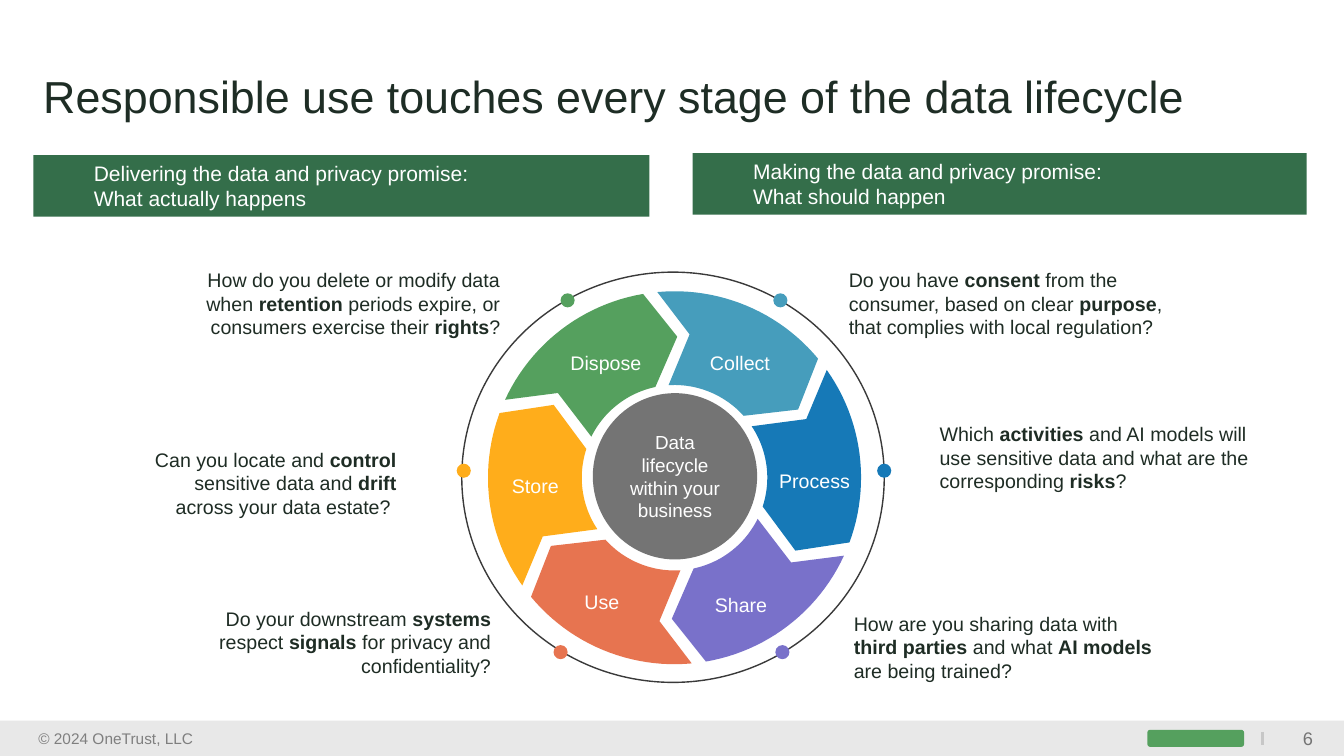
import math
from dataclasses import dataclass

from lxml import etree
from pptx import Presentation
from pptx import util as u
from pptx.dml import color
from pptx.enum import shapes, text
from pptx.oxml import ns

LEFT, CENTER, RIGHT = text.PP_ALIGN.LEFT, text.PP_ALIGN.CENTER, text.PP_ALIGN.RIGHT


@dataclass(frozen=True)
class Theme:
    font: str = "Arial"
    title: str = "1E2D25"
    body: str = "1E2C24"
    white: str = "FFFFFF"
    banner: str = "346E4A"
    hub: str = "747474"
    ring: str = "3A3A3A"
    footer: str = "E8E8E8"
    footer_text: str = "7F7F7F"
    divider: str = "C7C7C7"
    mark: str = "55A05E"
    title_size: float = 32
    banner_size: float = 15
    body_size: float = 14
    hub_size: float = 13.5
    number_size: float = 13
    footer_size: float = 11


THEME = Theme()

# name, colour, label (left, top), dot centre; clockwise, relative to the wheel box
STAGES = [
    ("Collect", "469DBC", (2.16, 0.73), (3.14, 0.28)),
    ("Process", "1679B7", (2.90, 1.90), (4.17, 1.97)),
    ("Share", "7971CA", (2.17, 3.13), (3.16, 3.77)),
    ("Use", "E77450", (0.79, 3.10), (0.96, 3.77)),
    ("Store", "FFAD1B", (0.13, 1.95), (0.00, 1.97)),
    ("Dispose", "55A05E", (0.83, 0.73), (1.03, 0.28)),
]

# box, alignment, text with the bold words between asterisks
QUESTIONS = [
    ((8.32, 2.61, 3.33, 0.81), LEFT,
     "Do you have *consent* from the consumer, based on clear *purpose*, "
     "that complies with local regulation?"),
    ((9.22, 4.14, 3.48, 0.81), LEFT,
     "Which *activities* and AI models will use sensitive data and what are "
     "the corresponding *risks*?"),
    ((8.37, 6.02, 3.2, 0.81), LEFT,
     "How are you sharing data with *third parties* and what *AI models* "
     "are being trained?"),
    ((1.69, 2.61, 3.37, 0.81), RIGHT,
     "How do you delete or modify data when *retention* periods expire, or "
     "consumers exercise their *rights*?"),
    ((1.25, 4.39, 2.78, 0.81), RIGHT,
     "Can you locate and *control* sensitive data and *drift* across your "
     "data estate? "),
    ((1.60, 5.97, 3.37, 0.81), RIGHT,
     "Do your downstream *systems* respect *signals* for privacy and "
     "confidentiality?"),
]


def inches(box):
    return [u.Inches(value) for value in box]


def rgb(value):
    return color.RGBColor.from_string(value)


def set_all(target, values):
    for name, value in values.items():
        setattr(target, name, value)


def paint(shape, fill=None, line=None):
    shape.shadow.inherit = False
    if fill:
        shape.fill.solid()
        shape.fill.fore_color.rgb = rgb(fill)
    else:
        shape.fill.background()
    if line:
        shape.line.color.rgb = rgb(line)
        shape.line.width = u.Pt(1)
    else:
        shape.line.fill.background()
    return shape


def add_shape(parent, kind, box, fill=None, line=None):
    return paint(parent.shapes.add_shape(kind, *inches(box)), fill, line)


def write(shape, lines, size, ink, align=LEFT, **frame_format):
    """Fill a shape with one paragraph per line; asterisks enclose bold words."""
    frame = shape.text_frame
    set_all(frame, {"word_wrap": True, **frame_format})
    for index, line in enumerate(lines):
        para = frame.add_paragraph() if index else frame.paragraphs[0]
        para.alignment = align
        for part, words in enumerate(line.split("*")):
            if not words:
                continue
            span = para.add_run()
            span.text = words
            set_all(span.font, {"name": THEME.font, "size": u.Pt(size), "bold": part % 2 == 1})
            span.font.color.rgb = rgb(ink)
    return frame


def add_text(parent, box, *args, **frame_format):
    return write(parent.shapes.add_textbox(*inches(box)), *args, **frame_format)


def add_footer(page, box):
    left, top, width, height = box
    add_shape(page, shapes.MSO_SHAPE.RECTANGLE, box, THEME.footer)
    add_text(page, (left + 0.35, top + 0.06, 3.47, 0.24), ["© 2024 OneTrust, LLC"],
             THEME.footer_size, THEME.footer_text, vertical_anchor=text.MSO_ANCHOR.MIDDLE,
             margin_left=u.Inches(0.03), margin_top=u.Inches(0.03), margin_bottom=u.Inches(0.03))
    add_shape(page, shapes.MSO_SHAPE.ROUNDED_RECTANGLE,
              (left + 11.38, top + 0.09, 0.96, 0.17), THEME.mark)
    divider = page.shapes.add_connector(
        shapes.MSO_CONNECTOR.STRAIGHT,
        *inches((left + 12.52, top + 0.11, left + 12.52, top + 0.24)))
    divider.line.color.rgb = rgb(THEME.divider)
    divider.line.width = u.Pt(2)
    etree.SubElement(divider.element.spPr, ns.qn("a:effectLst"))
    add_text(page, (left + 12.56, top + 0.04, 0.56, 0.27), ["6"], THEME.number_size,
             THEME.hub, RIGHT, vertical_anchor=text.MSO_ANCHOR.MIDDLE)


def add_title(page, box, title):
    frame = add_text(page, box, [title], THEME.title_size, THEME.title,
                     vertical_anchor=text.MSO_ANCHOR.MIDDLE)
    frame.paragraphs[0].line_spacing = 0.9


def add_banner(page, box, lines):
    banner = add_shape(page, shapes.MSO_SHAPE.RECTANGLE, box, THEME.banner)
    write(banner, lines, THEME.banner_size, THEME.white,
          vertical_anchor=text.MSO_ANCHOR.MIDDLE, margin_left=u.Inches(0.6))


def add_segment(wheel, center, turn, fill):
    """Draw one arrow-shaped ring segment, turned clockwise by the given degrees."""
    def point(radius, angle):
        radians = math.radians(angle + turn)
        return inches((center[0] + radius * math.cos(radians),
                       center[1] + radius * math.sin(radians)))

    def arc(radius, start, end, steps=24):
        return [point(radius, start + (end - start) * step / steps) for step in range(steps + 1)]

    outline = [point(1.43, -84), *arc(0.92, -93.7, -41.9), point(1.4, -28.9),
               *arc(1.85, -39.7, -95.3)]
    builder = wheel.shapes.build_freeform(*outline[0])
    builder.add_line_segments(outline[1:], close=True)
    paint(builder.convert_to_shape(), fill)


def add_wheel(page, box):
    left, top, width, height = box
    wheel = page.shapes.add_group_shape()
    oval, dot = shapes.MSO_SHAPE.OVAL, 0.14
    center = (left + 2.09, top + 2.04)
    for index, (name, fill, label, spot) in enumerate(STAGES):
        add_segment(wheel, center, 60 * index, fill)
    add_shape(wheel, oval, (left - 0.02, top, width, height), line=THEME.ring)
    for name, fill, label, spot in STAGES:
        add_shape(wheel, oval, (left + spot[0] - dot / 2, top + spot[1] - dot / 2, dot, dot), fill)
        add_text(wheel, (left + label[0], top + label[1], 1.16, 0.31), [name],
                 THEME.body_size, THEME.white, CENTER)
    hub = add_shape(wheel, oval, (left + 1.28, top + 1.2, 1.63, 1.65), THEME.hub)
    write(hub, ["Data lifecycle within your business"], THEME.hub_size, THEME.white, CENTER,
          vertical_anchor=text.MSO_ANCHOR.MIDDLE)


def main():
    deck = Presentation()
    deck.slide_width, deck.slide_height = u.Inches(13.33), u.Inches(7.5)
    page = deck.slides.add_slide(deck.slide_layouts[6])
    add_footer(page, (0, 7.15, 13.33, 0.35))
    add_title(page, (0.33, 0.63, 12.62, 0.7),
              "Responsible use touches every stage of the data lifecycle")
    for box, align, question in QUESTIONS:
        add_text(page, box, [question], THEME.body_size, THEME.body, align)
    add_wheel(page, (4.6, 2.7, 4.19, 4.07))
    add_banner(page, (6.87, 1.52, 6.09, 0.61),
               ["Making the data and privacy promise:", "What should happen"])
    add_banner(page, (0.33, 1.54, 6.11, 0.61),
               ["Delivering the data and privacy promise:", "What actually happens"])
    deck.save("out.pptx")


if __name__ == "__main__":
    main()
